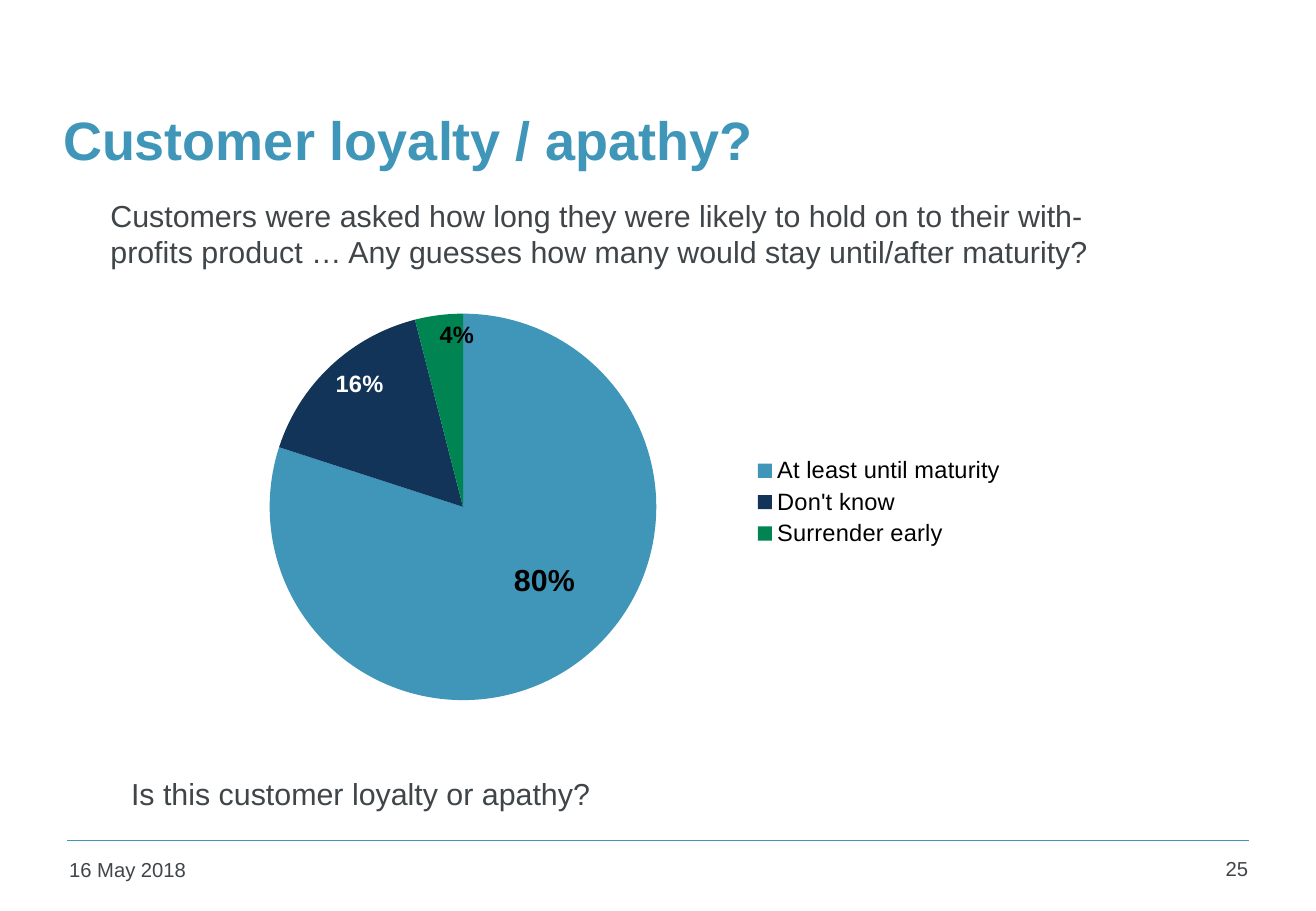
from lxml import etree
from pptx import Presentation
from pptx.chart.data import CategoryChartData
from pptx.dml.color import RGBColor
from pptx.enum.chart import XL_CHART_TYPE, XL_LABEL_POSITION, XL_LEGEND_POSITION
from pptx.enum.shapes import MSO_CONNECTOR
from pptx.enum.text import MSO_ANCHOR, PP_ALIGN
from pptx.oxml.ns import qn
from pptx.util import Inches, Pt

PIE = XL_CHART_TYPE.PIE
CENTER, INSIDE_END = XL_LABEL_POSITION.CENTER, XL_LABEL_POSITION.INSIDE_END
LEGEND_RIGHT = XL_LEGEND_POSITION.RIGHT
STRAIGHT = MSO_CONNECTOR.STRAIGHT
TOP, MIDDLE = MSO_ANCHOR.TOP, MSO_ANCHOR.MIDDLE
LEFT, RIGHT = PP_ALIGN.LEFT, PP_ALIGN.RIGHT

FONT = "Arial"
BLUE, NAVY, GREEN = "4096B8", "113458", "008452"
GREY, BLACK, WHITE = "3F4548", "000000", "FFFFFF"

ANSWERS = [
    ("At least until maturity", 0.80, BLUE, 18, BLACK, CENTER),
    ("Don't know", 0.16, NAVY, 14, WHITE, INSIDE_END),
    ("Surrender early", 0.04, GREEN, 14, BLACK, INSIDE_END),
]


def rgb(color):
    """Return the colour for a hex string."""
    return RGBColor.from_string(color)


def style_font(font, size, color, bold=False):
    """Set face, size, colour and weight of a font."""
    font.name, font.size, font.bold = FONT, Pt(size), bold
    font.color.rgb = rgb(color)


def add_text(s, text, x, y, w, h, size=18, color=GREY, bold=False,
             align=LEFT, anchor=TOP):
    """Add a wrapping text box with one formatted paragraph."""
    tf = s.shapes.add_textbox(Inches(x), Inches(y), Inches(w), Inches(h)).text_frame
    tf.word_wrap, tf.vertical_anchor = True, anchor
    p = tf.paragraphs[0]
    p.alignment = align
    r = p.add_run()
    r.text = text
    style_font(r.font, size, color, bold)


def add_rule(s, x1, x2, y):
    """Add the horizontal footer rule."""
    line = s.shapes.add_connector(STRAIGHT, Inches(x1), Inches(y), Inches(x2), Inches(y))
    line.line.color.rgb, line.line.width = rgb(BLUE), Pt(1)
    etree.SubElement(line.element.spPr, qn("a:effectLst"))


def set_layout(parent, index, **values):
    """Give a chart part a manual layout."""
    for old in parent.findall(qn("c:layout")):
        parent.remove(old)
    layout = etree.Element(qn("c:layout"))
    manual = etree.SubElement(layout, qn("c:manualLayout"))
    for tag, value in values.items():
        etree.SubElement(manual, qn(f"c:{tag}")).set("val", str(value))
    parent.insert(index, layout)


def add_pie(s, x, y, w, h):
    """Add the pie chart of customer answers."""
    data = CategoryChartData(number_format="0%")
    data.categories = [answer[0] for answer in ANSWERS]
    data.add_series("Series 1", [answer[1] for answer in ANSWERS])
    chart = s.shapes.add_chart(PIE, Inches(x), Inches(y), Inches(w), Inches(h), data).chart
    style_font(chart.font, 10, GREY)
    chart.has_title = False
    chart.has_legend = True
    chart.legend.position, chart.legend.include_in_layout = LEGEND_RIGHT, False
    style_font(chart.legend.font, 14, BLACK)

    plot = chart.plots[0]
    plot.vary_by_categories = True
    series = plot.series[0]
    labels = series.data_labels
    labels.show_value, labels.number_format = True, "0%"
    labels.number_format_is_linked = False
    style_font(labels.font, 14, BLACK, bold=True)
    for i, (_, _, fill, size, color, position) in enumerate(ANSWERS):
        point = series.points[i]
        point.format.fill.solid()
        point.format.fill.fore_color.rgb = rgb(fill)
        style_font(point.data_label.font, size, color, bold=True)
        point.data_label.position = position

    set_layout(chart.element.find(f".//{qn('c:plotArea')}"), 0, layoutTarget="inner",
               xMode="edge", yMode="edge", x=0.09, y=0.1, w=0.47, h=0.82)
    set_layout(chart.element.find(f".//{qn('c:dLbl')}"), 1, x=0.03, y=-0.01)


def main():
    """Build and save the slide."""
    prs = Presentation()
    prs.slide_width, prs.slide_height = Inches(10.83), Inches(7.5)
    s = prs.slides.add_slide(prs.slide_layouts[6])
    add_rule(s, 0.55, 10.28, 6.92)
    add_text(s, "Customer loyalty / apathy?", 0.42, 0.92, 9.22, 0.45,
             size=32, color=BLUE, bold=True, anchor=MIDDLE)
    add_pie(s, 1.61, 2.18, 6.77, 3.91)
    add_text(s, "Customers were asked how long they were likely to hold on to their "
             "with-profits product … Any guesses how many would stay until/after maturity?",
             0.81, 1.57, 8.38, 0.71)
    add_text(s, "Is this customer loyalty or apathy?", 0.98, 6.33, 8.38, 0.4)
    add_text(s, "16 May 2018", 0.47, 7.01, 2.39, 0.36, size=12)
    add_text(s, "25", 9.6, 7, 0.77, 0.37, size=12, align=RIGHT)
    prs.save("out.pptx")


if __name__ == "__main__":
    main()
